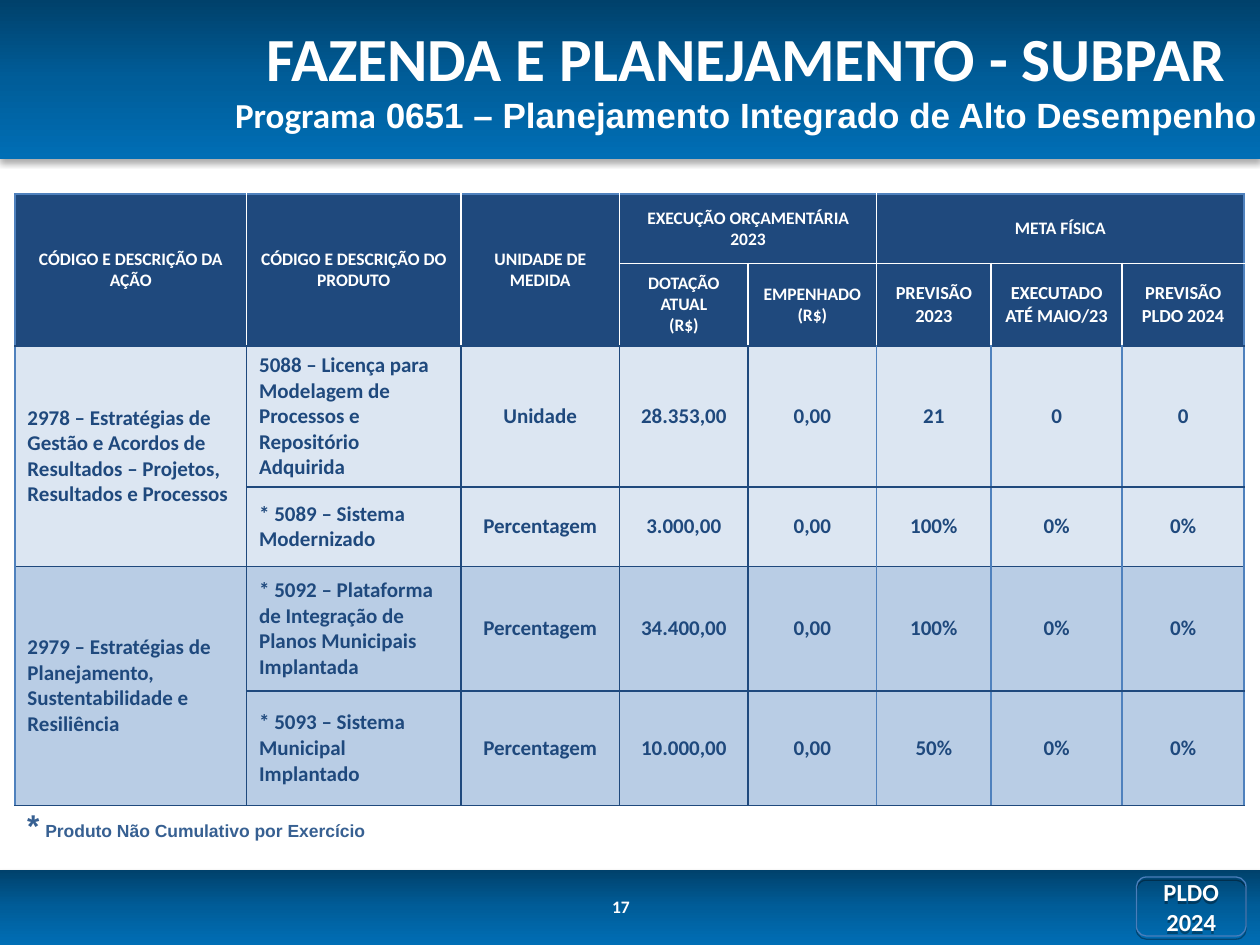
from lxml import etree
from pptx import Presentation
from pptx.dml.color import RGBColor
from pptx.enum import shapes, text
from pptx.oxml import ns
from pptx.util import Cm, Pt

WHITE = RGBColor(0xFF, 0xFF, 0xFF)
NAVY = RGBColor(0x1F, 0x49, 0x7D)
BLUE = RGBColor(0x4F, 0x81, 0xBD)
BADGE_LINE = RGBColor(0x4A, 0x7E, 0xBB)
NOTE = RGBColor(0x37, 0x60, 0x92)
PALE = RGBColor(0xDC, 0xE6, 0xF2)
MEDIUM = RGBColor(0xB9, 0xCD, 0xE5)
BLACK = RGBColor(0, 0, 0)
BAND_STOPS = [(0, RGBColor(0, 0x41, 0x6B)), (50, RGBColor(0, 0x5D, 0x99)),
              (100, RGBColor(0, 0x6E, 0xB5))]

COLUMNS = [4.67, 4.32, 3.2, 2.59, 2.59, 2.31, 2.64, 2.46]
HEADER = [
    ["CÓDIGO E DESCRIÇÃO DA AÇÃO", "CÓDIGO E DESCRIÇÃO DO PRODUTO", "UNIDADE DE MEDIDA",
     "EXECUÇÃO ORÇAMENTÁRIA 2023", "", "META FÍSICA", "", ""],
    ["", "", "", "DOTAÇÃO ATUAL\v(R$)", "EMPENHADO\v(R$)", "PREVISÃO 2023",
     "EXECUTADO ATÉ MAIO/23", "PREVISÃO PLDO 2024"],
]
HEADER_SPANS = [(0, 0, 1, 0), (0, 1, 1, 1), (0, 2, 1, 2), (0, 3, 0, 4), (0, 5, 0, 7)]
ACTION_2978 = [
    ["2978 – Estratégias de Gestão e Acordos de Resultados – Projetos, Resultados e Processos",
     "5088 – Licença para Modelagem de Processos e Repositório Adquirida",
     "Unidade", "28.353,00", "0,00", "21", "0", "0"],
    ["", "* 5089 – Sistema Modernizado", "Percentagem", "3.000,00", "0,00", "100%", "0%", "0%"],
]
ACTION_2979 = [
    ["2979 – Estratégias de Planejamento, Sustentabilidade e Resiliência",
     "* 5092 – Plataforma de Integração de Planos Municipais Implantada",
     "Percentagem", "34.400,00", "0,00", "100%", "0%", "0%"],
    ["", "* 5093 – Sistema Municipal Implantado", "Percentagem", "10.000,00", "0,00",
     "50%", "0%", "0%"],
]


def add_child(parent, tag, **attributes):
    return etree.SubElement(parent, ns.qn(tag), attributes)


def add_color(parent, color, alpha=None):
    node = add_child(parent, "a:srgbClr", val=str(color))
    if alpha:
        add_child(node, "a:alpha", val=str(alpha * 1000))


def add_shadow(shape, alpha, blur, distance):
    effects = add_child(shape._element.spPr, "a:effectLst")
    shadow = add_child(effects, "a:outerShdw", blurRad=str(Pt(blur)), dist=str(Pt(distance)),
                       dir="5400000", rotWithShape="0")
    add_color(shadow, BLACK, alpha)


def add_run(para, words, size, color, font="Calibri"):
    span = para.add_run()
    span.text = words
    span.font.size, span.font.name, span.font.bold = Pt(size), font, True
    span.font.color.rgb = color


def add_text_box(page, left, top, width, height):
    box = page.shapes.add_textbox(Cm(left), Cm(top), Cm(width), Cm(height))
    box.text_frame.word_wrap = True
    return box.text_frame


def add_band(page, left, top, width, height):
    band = page.shapes.add_shape(shapes.MSO_SHAPE.RECTANGLE,
                                 Cm(left), Cm(top), Cm(width), Cm(height))
    band.line.fill.background()
    gradient = etree.Element(ns.qn("a:gradFill"), rotWithShape="1")
    stops = add_child(gradient, "a:gsLst")
    for position, color in BAND_STOPS:
        add_color(add_child(stops, "a:gs", pos=str(position * 1000)), color)
    add_child(gradient, "a:lin", ang="5400000", scaled="0")
    band._element.spPr.find(ns.qn("a:prstGeom")).addnext(gradient)
    add_shadow(band, 32, 3.5, 2.2)


def add_title(page, left, top, width, height):
    add_band(page, left, top, width, height)
    frame = add_text_box(page, left + 3.5, top + 0.41, 23.09, 2.31)
    frame.vertical_anchor = text.MSO_ANCHOR.MIDDLE
    para = frame.paragraphs[0]
    para.alignment = text.PP_ALIGN.CENTER
    add_run(para, "FAZENDA E PLANEJAMENTO - SUBPAR", 35, WHITE)
    para.add_line_break()
    add_run(para, "Programa", 20, WHITE)
    add_run(para, " 0651 – Planejamento Integrado de Alto Desempenho", 20, WHITE, "Arial")


def add_footer(page, left, top, width, height):
    add_band(page, left, top, width, height)
    # Page number
    number = add_text_box(page, left + 12.09, top + 0.4, 1.19, 0.61)
    add_run(number.paragraphs[0], "17", 10, WHITE)
    # Badge
    badge = page.shapes.add_shape(shapes.MSO_SHAPE.ROUNDED_RECTANGLE, Cm(left + 22.91),
                                  Cm(top + 0.15), Cm(2.21), Cm(1.19))
    badge.fill.background()
    badge.line.color.rgb = BADGE_LINE
    badge.line.width = Pt(0.75)
    add_shadow(badge, 35, 0, 1.8)
    badge.text_frame.word_wrap = True
    badge.text_frame.vertical_anchor = text.MSO_ANCHOR.MIDDLE
    para = badge.text_frame.paragraphs[0]
    para.alignment = text.PP_ALIGN.CENTER
    add_run(para, "PLDO 2024", 14, WHITE)


def vertical_edge(is_header, edge):
    if is_header:
        return WHITE if 0 < edge < len(COLUMNS) else BLUE
    return BLUE if edge == 0 or edge >= 5 else NAVY


def horizontal_edge(has_header, edge, column):
    if has_header and edge == 0:
        return BLUE
    return WHITE if has_header and edge == 1 and column >= 3 else NAVY


def set_borders(cell, colors):
    properties = cell._tc.get_or_add_tcPr()
    for position, (side, color) in enumerate(zip("LRTB", colors)):
        line = etree.Element(ns.qn(f"a:ln{side}"), w=str(Pt(1)))
        add_color(add_child(line, "a:solidFill"), color)
        properties.insert(position, line)


def add_actions(page, left, top, heights, rows, body_fill, spans, header_rows=0):
    frame = page.shapes.add_table(len(rows), len(COLUMNS), Cm(left), Cm(top),
                                  Cm(sum(COLUMNS)), Cm(sum(heights)))
    table = frame.table
    table.first_row = table.horz_banding = False
    for column, width in zip(table.columns, COLUMNS):
        column.width = Cm(width)
    for row, height in zip(table.rows, heights):
        row.height = Cm(height)
    for first_row, first_column, last_row, last_column in spans:
        table.cell(first_row, first_column).merge(table.cell(last_row, last_column))

    for r, values in enumerate(rows):
        is_header = r < header_rows
        for c, words in enumerate(values):
            cell = table.cell(r, c)
            cell.fill.solid()
            cell.fill.fore_color.rgb = NAVY if is_header else body_fill
            cell.vertical_anchor = text.MSO_ANCHOR.MIDDLE
            right = c + (cell.span_width if cell.is_merge_origin else 1)
            bottom = r + (cell.span_height if cell.is_merge_origin else 1)
            set_borders(cell, [vertical_edge(is_header, c), vertical_edge(is_header, right),
                               horizontal_edge(header_rows, r, c),
                               horizontal_edge(header_rows, bottom, c)])
            if cell.is_spanned:
                continue
            para = cell.text_frame.paragraphs[0]
            centred = is_header or c >= 2
            para.alignment = text.PP_ALIGN.CENTER if centred else text.PP_ALIGN.LEFT
            size = 12
            if is_header:
                size = 10.5 if r == 1 and c >= 5 else 10
            for index, line in enumerate(words.split("\v")):
                if index:
                    para.add_line_break()
                add_run(para, line, size, WHITE if is_header else NAVY)


def add_note(page, left, top, width, height):
    para = add_text_box(page, left, top, width, height).paragraphs[0]
    for words, size in [("*", 18), (" ", 12), ("Produto Não Cumulativo por Exercício", 10)]:
        add_run(para, words, size, NOTE, "Arial")


def main():
    deck = Presentation()
    deck.slide_width, deck.slide_height = Cm(25.4), Cm(19.05)
    page = deck.slides.add_slide(deck.slide_layouts[6])
    add_title(page, 0, 0, 25.4, 3.2)
    add_footer(page, 0, 17.53, 25.4, 1.52)
    # One table for each action; the first carries the header
    add_actions(page, 0.3, 3.91, [1.4, 1.67, 2.84, 1.6], HEADER + ACTION_2978, PALE,
                HEADER_SPANS + [(2, 0, 3, 0)], header_rows=2)
    add_actions(page, 0.3, 11.42, [2.51, 2.31], ACTION_2979, MEDIUM, [(0, 0, 1, 0)])
    add_note(page, 0.3, 16.13, 12.01, 1.02)
    deck.save("out.pptx")


if __name__ == "__main__":
    main()
